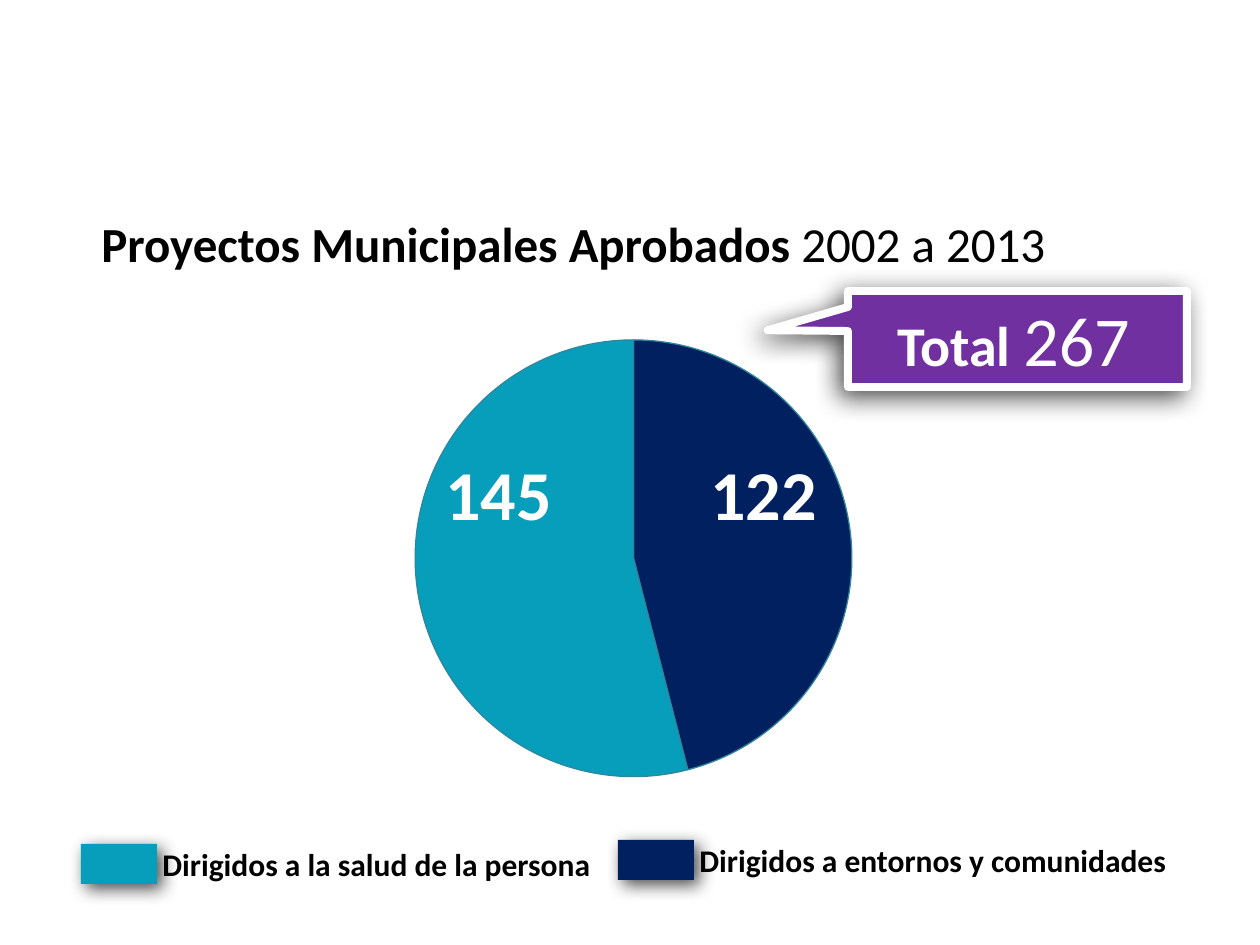
from lxml import etree
from pptx import Presentation
from pptx.chart.data import CategoryChartData
from pptx.dml.color import RGBColor
from pptx.enum.chart import XL_CHART_TYPE
from pptx.enum.shapes import MSO_SHAPE
from pptx.enum.text import MSO_ANCHOR
from pptx.oxml import parse_xml
from pptx.oxml.ns import nsdecls, qn
from pptx.util import Emu, Pt

PIE = XL_CHART_TYPE.PIE
RECT = MSO_SHAPE.RECTANGLE
CALLOUT = MSO_SHAPE.RECTANGULAR_CALLOUT
TOP, MIDDLE = MSO_ANCHOR.TOP, MSO_ANCHOR.MIDDLE

EMU_PER_PX = 914400 // 126
FONT = "Calibri"
BLACK, WHITE = "000000", "FFFFFF"
TEAL, NAVY, PURPLE, EDGE = "079EBB", "002060", "7030A0", "31859C"


def px(n):
    return Emu(n * EMU_PER_PX)


def box(*lengths):
    return [px(n) for n in lengths]


def rgb(value):
    return RGBColor.from_string(value)


def style(font, size, color, bold=False):
    font.name, font.size, font.bold = FONT, Pt(size), bold
    font.color.rgb = rgb(color)


def add_text(s, at, runs, size, color, wrap=False, anchor=TOP):
    """Add one line of text; runs is a list of (text, bold)."""
    tf = s.shapes.add_textbox(*box(*at)).text_frame
    tf.word_wrap, tf.vertical_anchor = wrap, anchor
    for text, bold in runs:
        r = tf.paragraphs[0].add_run()
        r.text = text
        style(r.font, size, color, bold)


def add_shadow(sp, blur, dist, angle):
    sp.shadow.inherit = False
    effects = sp._element.spPr.find(qn("a:effectLst"))
    shadow = etree.SubElement(
        effects, qn("a:outerShdw"), blurRad=str(Pt(blur)), dist=str(Pt(dist)),
        dir=str(angle * 60000), algn="tl", rotWithShape="0")
    color = etree.SubElement(shadow, qn("a:srgbClr"), val=BLACK)
    etree.SubElement(color, qn("a:alpha"), val="70000")


def add_block(s, kind, at, fill):
    sp = s.shapes.add_shape(kind, *box(*at))
    sp.fill.solid()
    sp.fill.fore_color.rgb = rgb(fill)
    sp.line.fill.background()
    return sp


def add_legend_entry(s, left, top, width, label, color):
    add_shadow(add_block(s, RECT, (left, top, 76, 40), color), 10, 4, 45)
    add_text(s, (left + 69, top - 5, width, 50), [(label, True)], 18, BLACK)


def add_total(s):
    sp = add_block(s, CALLOUT, (848, 291, 339, 96), PURPLE)
    sp.adjustments[0], sp.adjustments[1] = -0.737, -0.091
    sp.line.color.rgb = rgb(WHITE)
    sp.line.width = Pt(4.5)
    add_shadow(sp, 15, 5, 135)
    add_text(s, (1011, 290, 134, 97), [("267", False)], 40, WHITE)
    add_text(s, (885, 304, 140, 81), [("Total", True)], 32, WHITE)


def add_pie(s):
    data = CategoryChartData()
    data.categories = ["1", "2"]
    data.add_series("Series 1", (46, 54))
    chart = s.shapes.add_chart(PIE, *box(272, 321, 716, 470), data).chart
    chart.has_legend = chart.has_title = False
    style(chart.font, 18, BLACK)
    plot = chart.plots[0]
    plot.vary_by_categories = True
    for i, color in enumerate((NAVY, TEAL)):
        fmt = plot.series[0].points[i].format
        fmt.fill.solid()
        fmt.fill.fore_color.rgb = rgb(color)
        fmt.line.color.rgb = rgb(EDGE)
        fmt.line.width = Pt(0.75)
    set_plot_area(chart, x=0.2, y=0.04, w=0.61, h=0.93)


def set_plot_area(chart, **fractions):
    area = chart._chartSpace.chart.plotArea
    for old in area.findall(qn("c:layout")):
        area.remove(old)
    sizes = "".join(f'<c:{k} val="{v}"/>' for k, v in fractions.items())
    area.insert(0, parse_xml(
        f'<c:layout {nsdecls("c")}><c:manualLayout><c:layoutTarget val="inner"/>'
        f'<c:xMode val="edge"/><c:yMode val="edge"/>{sizes}'
        '</c:manualLayout></c:layout>'))


def main():
    prs = Presentation()
    prs.slide_width, prs.slide_height = px(1260), px(945)
    s = prs.slides.add_slide(prs.slide_layouts[6])
    title = [("Proyectos Municipales Aprobados ", True), ("2002 a 2013", False)]
    add_text(s, (89, 207, 1058, 72), title, 28, BLACK, wrap=True, anchor=MIDDLE)
    add_pie(s)
    for left, value in ((433, "145"), (698, "122")):
        add_text(s, (left, 444, 132, 97), [(value, True)], 40, WHITE)
    add_legend_entry(s, 81, 844, 456, "Dirigidos a la salud de la persona", TEAL)
    add_legend_entry(s, 618, 840, 495, "Dirigidos a entornos y comunidades", NAVY)
    add_total(s)
    prs.save("out.pptx")


if __name__ == "__main__":
    main()
